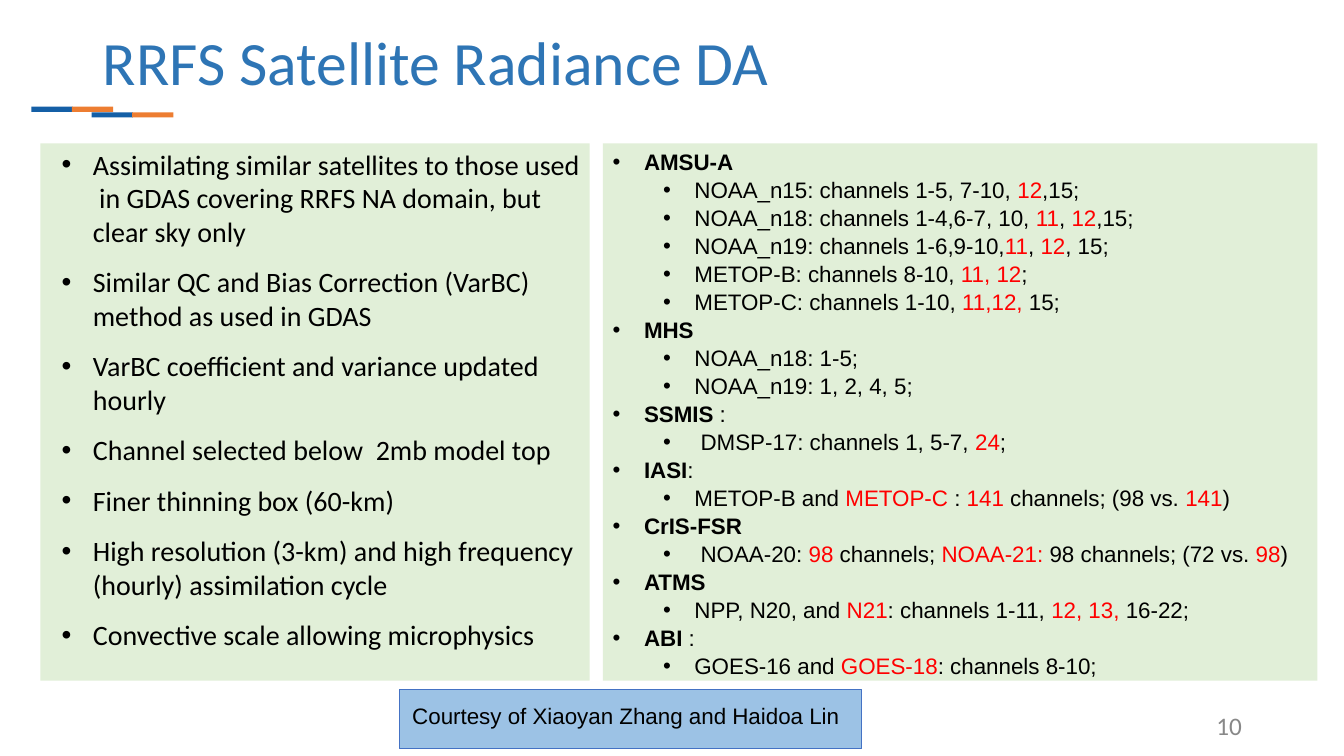
from dataclasses import dataclass

from lxml.etree import SubElement
from pptx import Presentation
from pptx.dml.color import RGBColor
from pptx.enum.shapes import MSO_SHAPE
from pptx.enum.text import MSO_ANCHOR, MSO_AUTO_SIZE, PP_ALIGN
from pptx.oxml.ns import qn
from pptx.util import Cm, Pt

TITLE = "RRFS Satellite Radiance DA"
METHOD_POINTS = [
    "Assimilating similar satellites to those used  in GDAS covering RRFS NA domain, but clear sky only",
    "Similar QC and Bias Correction (VarBC) method as used in GDAS",
    "VarBC coefficient and variance updated hourly",
    "Channel selected below  2mb model top",
    "Finer thinning box (60-km)",
    "High resolution (3-km) and high frequency (hourly) assimilation cycle",
    "Convective scale allowing microphysics",
]
# (instrument, text after its name, channel lines); bars enclose the red parts
INSTRUMENTS = [
    ("AMSU-A", "", [
        "NOAA_n15: channels 1-5, 7-10, |12|,15;",
        "NOAA_n18: channels 1-4,6-7, 10, |11|, |12|,15;",
        "NOAA_n19: channels 1-6,9-10,|11|, |12|, 15;",
        "METOP-B: channels 8-10, |11, 12|;",
        "METOP-C: channels 1-10, |11,12,| 15;",
    ]),
    ("MHS", "", ["NOAA_n18: 1-5;", "NOAA_n19: 1, 2, 4, 5;"]),
    ("SSMIS", " :", [" DMSP-17: channels 1, 5-7, |24|;"]),
    ("IASI", ":", ["METOP-B and |METOP-C |: |141| channels; (98 vs. |141|)"]),
    ("CrIS-FSR", "", [" NOAA-20: |98| channels; |NOAA-21: |98 channels; (72 vs. |98|)"]),
    ("ATMS", "", ["NPP, N20, and| N21|: channels 1-11, |12, 13,| 16-22;"]),
    ("ABI", " :", ["GOES-16 and |GOES-18|: channels 8-10;"]),
]
CREDIT = "Courtesy of Xiaoyan Zhang and Haidoa Lin"
SLIDE_NUMBER = "10"


@dataclass(frozen=True)
class Theme:
    heading_font: str = "Calibri"
    detail_font: str = "Arial"
    title_size: int = 44
    method_size: int = 20
    number_size: int = 18
    detail_size: int = 16
    title: str = "2E75B5"
    text: str = "000000"
    highlight: str = "FF0000"
    number: str = "888888"
    panel: str = "E1EFD8"
    credit_fill: str = "9CC2E5"
    credit_line: str = "4472C4"
    bar_colors: tuple = ("145FA6", "ED7D31")


THEME = Theme()
PANEL_TOP, PANEL_HEIGHT = 3.61, 13.54
HANGING = 0.79
BAR_WIDTH, BAR_HEIGHT, BAR_STEP = 1.04, 0.13, 1.02
BAR_PAIRS = [(0.79, 2.69), (2.31, 2.83)]


def place(shape, left, top, width, height):
    shape.left, shape.top, shape.width, shape.height = map(Cm, (left, top, width, height))


def prepare_frame(shape, horizontal, vertical, anchor):
    frame = shape.text_frame
    frame.word_wrap = True
    frame.auto_size = MSO_AUTO_SIZE.NONE
    frame.vertical_anchor = anchor
    frame.margin_left = frame.margin_right = Cm(horizontal)
    frame.margin_top = frame.margin_bottom = Cm(vertical)
    return frame


def fill_solid(shape, color):
    shape.fill.solid()
    shape.fill.fore_color.rgb = RGBColor.from_string(color)


def style_run(run, font, size, color, bold=False):
    run.font.name, run.font.size, run.font.bold = font, Pt(size), bold
    run.font.color.rgb = RGBColor.from_string(color)


def write_line(frame, text, font, size, color, alignment=PP_ALIGN.LEFT):
    paragraph = frame.paragraphs[0]
    paragraph.text = text
    paragraph.alignment = alignment
    style_run(paragraph.runs[0], font, size, color)
    return paragraph


def add_bullet(frame, index, parts, font, size, indent, gap, level=0):
    """Add one bulleted paragraph; parts are (text, color, bold)."""
    paragraph = frame.add_paragraph() if index else frame.paragraphs[0]
    paragraph.level = level
    paragraph.alignment = PP_ALIGN.LEFT
    paragraph.line_spacing = 1.0
    paragraph.space_before = Pt(gap if index else 0)
    properties = paragraph._p.get_or_add_pPr()
    properties.set("marL", str(Cm(indent)))
    properties.set("indent", str(-Cm(HANGING)))
    bullet_color = SubElement(properties, qn("a:buClr"))
    SubElement(bullet_color, qn("a:srgbClr"), val=THEME.text)
    SubElement(properties, qn("a:buFont"), typeface=THEME.detail_font)
    SubElement(properties, qn("a:buChar"), char="•")
    for text, color, bold in parts:
        if text:
            run = paragraph.add_run()
            run.text = text
            style_run(run, font, size, color, bold)


def add_accent_bars(slide):
    for left, top in BAR_PAIRS:
        for column, color in enumerate(THEME.bar_colors):
            bar = slide.shapes.add_shape(MSO_SHAPE.RECTANGLE, Cm(left + column * BAR_STEP),
                                         Cm(top), Cm(BAR_WIDTH), Cm(BAR_HEIGHT))
            bar.shadow.inherit = False
            fill_solid(bar, color)
            bar.line.fill.background()


def fill_title(shape):
    place(shape, 2.34, 0.66, 29.21, 1.96)
    frame = prepare_frame(shape, 0.25, 0.13, MSO_ANCHOR.MIDDLE)
    paragraph = write_line(frame, TITLE, THEME.heading_font, THEME.title_size, THEME.title)
    paragraph.line_spacing = 0.9


def fill_methods(shape):
    place(shape, 1.02, PANEL_TOP, 13.84, PANEL_HEIGHT)
    fill_solid(shape, THEME.panel)
    frame = prepare_frame(shape, 0.18, 0.1, MSO_ANCHOR.TOP)
    for index, point in enumerate(METHOD_POINTS):
        add_bullet(frame, index, [(point, THEME.text, False)],
                   THEME.heading_font, THEME.method_size, 1.14, 12)


def fill_instruments(shape):
    place(shape, 15.19, PANEL_TOP, 18.01, PANEL_HEIGHT)
    fill_solid(shape, THEME.panel)
    frame = prepare_frame(shape, 0.25, 0.13, MSO_ANCHOR.TOP)
    rows = []
    for name, suffix, lines in INSTRUMENTS:
        rows.append((0, [(name, THEME.text, True), (suffix, THEME.text, False)]))
        for line in lines:
            rows.append((1, [(text, THEME.highlight if part % 2 else THEME.text, False)
                             for part, text in enumerate(line.split("|"))]))
    for index, (level, parts) in enumerate(rows):
        add_bullet(frame, index, parts, THEME.detail_font, THEME.detail_size,
                   HANGING + level * 1.27, 0.8, level)


def add_credit(slide):
    credit = slide.shapes.add_shape(MSO_SHAPE.RECTANGLE, Cm(10.06), Cm(17.37), Cm(11.66), Cm(1.5))
    credit.shadow.inherit = False
    fill_solid(credit, THEME.credit_fill)
    credit.line.color.rgb = RGBColor.from_string(THEME.credit_line)
    credit.line.width = Pt(0.75)
    frame = prepare_frame(credit, 0.33, 0.33, MSO_ANCHOR.TOP)
    write_line(frame, CREDIT, THEME.detail_font, THEME.detail_size, THEME.text)


def add_slide_number(slide):
    box = slide.shapes.add_textbox(Cm(29.95), Cm(17.78), Cm(1.6), Cm(1.02))
    frame = prepare_frame(box, 0.25, 0.13, MSO_ANCHOR.MIDDLE)
    write_line(frame, SLIDE_NUMBER, THEME.heading_font, THEME.number_size,
               THEME.number, PP_ALIGN.RIGHT)


def main():
    presentation = Presentation()
    presentation.slide_width, presentation.slide_height = Cm(33.87), Cm(19.05)
    slide = presentation.slides.add_slide(presentation.slide_layouts[3])
    title, methods, instruments = slide.placeholders
    add_accent_bars(slide)
    fill_title(title)
    fill_methods(methods)
    fill_instruments(instruments)
    add_slide_number(slide)
    add_credit(slide)
    presentation.save("out.pptx")


if __name__ == "__main__":
    main()
